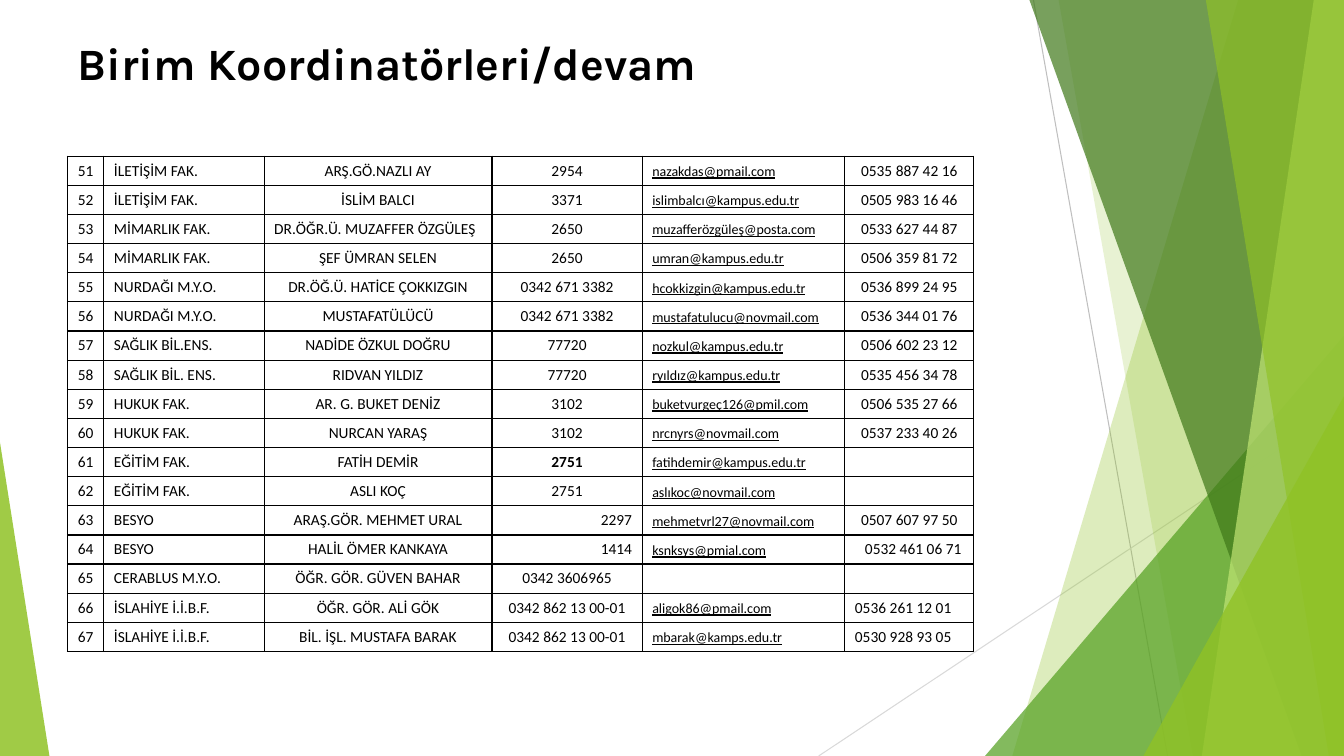
"""Builds the slide listing unit coordinators 51 to 67 beside a green facet design."""
from pptx import Presentation
from pptx.dml.color import RGBColor
from pptx.enum.shapes import MSO_CONNECTOR, MSO_SHAPE
from pptx.enum.text import MSO_ANCHOR, MSO_AUTO_SIZE, PP_ALIGN
from pptx.oxml import parse_xml
from pptx.oxml.ns import nsdecls, qn
from pptx.util import Inches, Pt

STRAIGHT, TRIANGLE = MSO_CONNECTOR.STRAIGHT, MSO_SHAPE.ISOSCELES_TRIANGLE
LEFT, CENTER, RIGHT = PP_ALIGN.LEFT, PP_ALIGN.CENTER, PP_ALIGN.RIGHT
TOP, MIDDLE, BOTTOM = MSO_ANCHOR.TOP, MSO_ANCHOR.MIDDLE, MSO_ANCHOR.BOTTOM

THEME = {
    "text": "000000", "border": "000000",
    "steep_line": "BFBFBF", "low_line": "D9D9D9",
    "lime": "90C226", "green": "54A021", "forest": "3F7819", "pale": "C0E474",
    "title_font": "Karla", "table_font": "Calibri",
    "title_size": 32, "cell_size": 11, "email_size": 10,
}
WIDTH, HEIGHT = 13.33, 7.5


def paint(shape, color, opacity):
    """Fill a facet with a translucent theme colour and no outline."""
    shape.shadow.inherit = False
    shape.line.fill.background()
    shape.fill.solid()
    shape.fill.fore_color.rgb = RGBColor.from_string(THEME[color])
    clr = shape.fill._xPr.find(qn("a:solidFill"))[0]
    clr.append(parse_xml(f'<a:alpha {nsdecls("a")} val="{opacity * 1000}"/>'))


def style(p, font, size):
    """Apply a theme font, size and the text colour to a paragraph."""
    p.font.name = THEME[font]
    p.font.size = Pt(THEME[size])
    p.font.color.rgb = RGBColor.from_string(THEME["text"])


prs = Presentation()
prs.slide_width, prs.slide_height = Inches(WIDTH), Inches(HEIGHT)
s = prs.slides.add_slide(prs.slide_layouts[5])

for x1, y1, x2, y2, color in [
    (10.25, 0, 11.58, HEIGHT, "steep_line"),
    (WIDTH, 4.03, 8.12, HEIGHT, "low_line"),
]:
    line = s.shapes.add_connector(STRAIGHT, Inches(x1), Inches(y1), Inches(x2), Inches(y2))
    line.line.color.rgb = RGBColor.from_string(THEME[color])
    line.line.width = Pt(0.75)
    line._element.spPr.append(parse_xml(f'<a:effectLst {nsdecls("a")}/>'))

FACETS = [
    ("band", 12.28, 10.04, "lime", 30),
    ("band", 10.5, 11.83, "lime", 20),
    ("triangle", 9.77, 3.33, 3.56, 1, "green", 72),
    ("band", 10.21, 12.91, "forest", 70),
    ("band", 13.03, 11.92, "pale", 70),
    ("band", 11.96, 13.18, "lime", 65),
    ("triangle", 11.34, 3.93, 1.99, 1, "lime", 80),
    ("triangle", 0, 4.39, 0.49, 0, "lime", 85),
]
for kind, *geometry, color, opacity in FACETS:
    if kind == "band":
        top_x, bottom_x = geometry
        builder = s.shapes.build_freeform(Inches(top_x), 0)
        corners = [(WIDTH, 0), (WIDTH, HEIGHT), (bottom_x, HEIGHT)]
        builder.add_line_segments([(Inches(x), Inches(y)) for x, y in corners], close=True)
        facet = builder.convert_to_shape()
    else:
        x, y, w, apex = geometry
        facet = s.shapes.add_shape(TRIANGLE, Inches(x), Inches(y), Inches(w), Inches(HEIGHT - y))
        facet.adjustments[0] = apex
    paint(facet, color, opacity)

title = s.shapes.title
s.shapes.element.append(title._element)
title.left, title.top, title.width, title.height = Inches(0.67), Inches(0.3), Inches(12), Inches(1.25)
tf = title.text_frame
tf.text = "Birim Koordinatörleri/devam"
tf.auto_size = MSO_AUTO_SIZE.NONE
tf.vertical_anchor = TOP
p = tf.paragraphs[0]
p.alignment = LEFT
p.font.bold = True
style(p, "title_font", "title_size")

COORDINATORS = [
    ("51", "İLETİŞİM FAK.", "ARŞ.GÖ.NAZLI AY", "2954", "nazakdas@pmail.com", "0535 887 42 16"),
    ("52", "İLETİŞİM FAK.", "İSLİM BALCI", "3371", "islimbalcı@kampus.edu.tr", "0505 983 16 46"),
    ("53", "MİMARLIK FAK.", "DR.ÖĞR.Ü. MUZAFFER ÖZGÜLEŞ", "2650", "muzafferözgüleş@posta.com", "0533 627 44 87"),
    ("54", "MİMARLIK FAK.", "ŞEF ÜMRAN SELEN", "2650", "umran@kampus.edu.tr", "0506 359 81 72"),
    ("55", "NURDAĞI M.Y.O.", "DR.ÖĞ.Ü. HATİCE ÇOKKIZGIN", "0342 671 3382", "hcokkizgin@kampus.edu.tr", "0536 899 24 95"),
    ("56", "NURDAĞI M.Y.O.", "MUSTAFATÜLÜCÜ", "0342 671 3382", "mustafatulucu@novmail.com", "0536 344 01 76"),
    ("57", "SAĞLIK BİL.ENS.", "NADİDE ÖZKUL DOĞRU", "77720", "nozkul@kampus.edu.tr", "0506 602 23 12"),
    ("58", "SAĞLIK BİL. ENS.", "RIDVAN YILDIZ", "77720", "ryıldız@kampus.edu.tr", "0535 456 34 78"),
    ("59", "HUKUK FAK.", "AR. G. BUKET DENİZ", "3102", "buketvurgeç126@pmil.com", "0506 535 27 66"),
    ("60", "HUKUK FAK.", "NURCAN YARAŞ", "3102", "nrcnyrs@novmail.com", "0537 233 40 26"),
    ("61", "EĞİTİM FAK.", "FATİH DEMİR", "2751", "fatihdemir@kampus.edu.tr", ""),
    ("62", "EĞİTİM FAK.", "ASLI KOÇ", "2751", "aslıkoc@novmail.com", ""),
    ("63", "BESYO", "ARAŞ.GÖR. MEHMET URAL", "2297", "mehmetvrl27@novmail.com", "0507 607 97 50"),
    ("64", "BESYO", "HALİL ÖMER KANKAYA", "1414", "ksnksys@pmial.com", "0532 461 06 71"),
    ("65", "CERABLUS M.Y.O.", "ÖĞR. GÖR. GÜVEN BAHAR", "0342 3606965", "", ""),
    ("66", "İSLAHİYE İ.İ.B.F.", "ÖĞR. GÖR. ALİ GÖK", "0342 862 13 00-01", "aligok86@pmail.com", "0536 261 12 01"),
    ("67", "İSLAHİYE İ.İ.B.F.", "BİL. İŞL. MUSTAFA BARAK", "0342 862 13 00-01", "mbarak@kamps.edu.tr", "0530 928 93 05"),
]
COL_WIDTHS = [0.36, 1.59, 2.26, 1.49, 2.01, 1.28]
COL_ALIGN = [CENTER, LEFT, CENTER, CENTER, LEFT, CENTER]
COL_ANCHOR = [MIDDLE, MIDDLE, MIDDLE, BOTTOM, BOTTOM, MIDDLE]
NAME, EXTENSION, EMAIL, MOBILE = 2, 3, 4, 5
ALIGN_EXCEPTIONS = {
    ("53", NAME): LEFT, ("63", EXTENSION): RIGHT, ("64", EXTENSION): RIGHT,
    ("64", MOBILE): LEFT, ("66", MOBILE): LEFT, ("67", MOBILE): LEFT,
}

table = s.shapes.add_table(
    len(COORDINATORS), len(COL_WIDTHS), Inches(0.67), Inches(1.55), Inches(9), Inches(4.82)
).table
table.first_row = table.horz_banding = False
for column, width in zip(table.columns, COL_WIDTHS):
    column.width = Inches(width)

for i, row in enumerate(COORDINATORS):
    for j, value in enumerate(row):
        cell = table.cell(i, j)
        key = (row[0], j)
        cell.text = value
        cell.vertical_anchor = BOTTOM if j == MOBILE and key in ALIGN_EXCEPTIONS else COL_ANCHOR[j]
        p = cell.text_frame.paragraphs[0]
        p.alignment = ALIGN_EXCEPTIONS.get(key, COL_ALIGN[j])
        style(p, "table_font", "email_size" if j == EMAIL else "cell_size")
        p.font.underline = j == EMAIL
        p.font.bold = key == ("61", EXTENSION)
        if key == ("64", MOBILE):
            cell.margin_left = Inches(0.2)
        tcPr = cell._tc.get_or_add_tcPr()
        for side in ("lnL", "lnR", "lnT", "lnB"):
            tcPr.append(parse_xml(
                f'<a:{side} {nsdecls("a")} w="{Pt(1)}"><a:solidFill>'
                f'<a:srgbClr val="{THEME["border"]}"/></a:solidFill></a:{side}>'))
        cell.fill.background()

prs.save("out.pptx")
